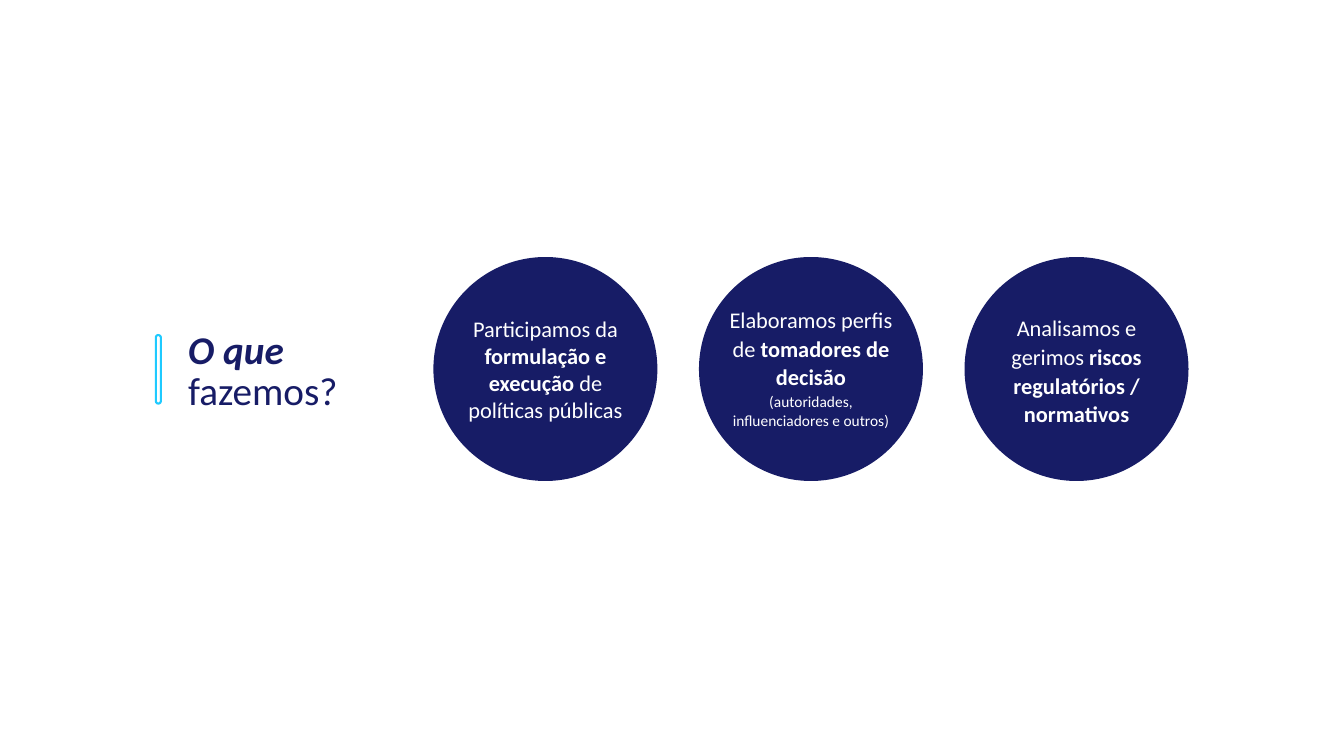
from pptx import Presentation
from pptx.dml.color import RGBColor
from pptx.enum.shapes import MSO_SHAPE
from pptx.enum.text import MSO_AUTO_SIZE, PP_ALIGN
from pptx.util import Pt

NAVY = RGBColor(0x17, 0x1C, 0x66)
CYAN = RGBColor(0x1F, 0xCA, 0xFF)
WHITE = RGBColor(0xFF, 0xFF, 0xFF)

CIRCLE_LEFT, CIRCLE_TOP, CIRCLE_SIZE, CIRCLE_PITCH = 309.6, 183.6, 160, 189.7

BOLD = {"bold": True}
SMALL = {"size": Pt(11)}

# Text top, width and height, line spacing, and paragraphs of (text, format) runs
SERVICES = [
    (221.8, 149.8, 85, None, [
        [("Participamos da ", {}), ("formulação e execução ", BOLD),
         ("de políticas públicas", {})],
    ]),
    (213.8, 144.7, 100, 1.07, [
        [("Elaboramos perfis de ", {}), ("tomadores de decisão", BOLD)],
        [("(autoridades, influenciadores e outros)", SMALL)],
    ]),
    (219.6, 149.8, 89.3, 1.07, [
        [("Analisamos e gerimos ", {}),
         ("riscos regulatórios / normativos", BOLD)],
    ]),
]


class SlideBuilder:
    def __init__(self, slide, font_name="Calibri"):
        self.slide = slide
        self.font_name = font_name

    def shape(self, kind, left, top, width, height, fill=None, line=None):
        shape = self.slide.shapes.add_shape(
            kind, Pt(left), Pt(top), Pt(width), Pt(height))
        shape.shadow.inherit = False
        if fill is None:
            shape.fill.background()
        else:
            shape.fill.solid()
            shape.fill.fore_color.rgb = fill
        if line is None:
            shape.line.fill.background()
        else:
            shape.line.color.rgb = line
            shape.line.width = Pt(1.5)
        return shape

    def text(self, left, top, width, height, paragraphs, size, color,
             wrap=True, **paragraph_format):
        box = self.slide.shapes.add_textbox(
            Pt(left), Pt(top), Pt(width), Pt(height))
        frame = box.text_frame
        frame.word_wrap = wrap
        frame.auto_size = MSO_AUTO_SIZE.SHAPE_TO_FIT_TEXT
        for index, runs in enumerate(paragraphs):
            paragraph = frame.add_paragraph() if index else frame.paragraphs[0]
            for name, value in paragraph_format.items():
                setattr(paragraph, name, value)
            for words, run_format in runs:
                run = paragraph.add_run()
                run.text = words
                run.font.color.rgb = color
                font_format = {"name": self.font_name, "size": Pt(size)} | run_format
                for name, value in font_format.items():
                    setattr(run.font, name, value)

    def title(self):
        self.text(127.4, 229, 83.5, 41, [[("O que", {"bold": True, "italic": True})]],
                  28, NAVY, wrap=False)
        self.text(127.4, 257.8, 122.4, 41, [[("fazemos?", {})]],
                  28, NAVY, wrap=False)
        bar = self.shape(MSO_SHAPE.ROUNDED_RECTANGLE, 88.6, 262, 49, 3.6, line=CYAN)
        bar.adjustments[0] = 0.5
        bar.rotation = 90

    def service(self, left, text_top, width, height, line_spacing, paragraphs):
        """Draw a circle with its text centred across it."""
        self.shape(MSO_SHAPE.OVAL, left, CIRCLE_TOP, CIRCLE_SIZE, CIRCLE_SIZE, fill=NAVY)
        self.text(left + (CIRCLE_SIZE - width) / 2, text_top, width, height,
                  paragraphs, 16, WHITE,
                  alignment=PP_ALIGN.CENTER, line_spacing=line_spacing)


def main():
    presentation = Presentation()
    presentation.slide_width = Pt(960)
    presentation.slide_height = Pt(540)
    builder = SlideBuilder(presentation.slides.add_slide(presentation.slide_layouts[6]))
    builder.title()
    for index, service in enumerate(SERVICES):
        builder.service(CIRCLE_LEFT + index * CIRCLE_PITCH, *service)
    presentation.save("out.pptx")


if __name__ == "__main__":
    main()
